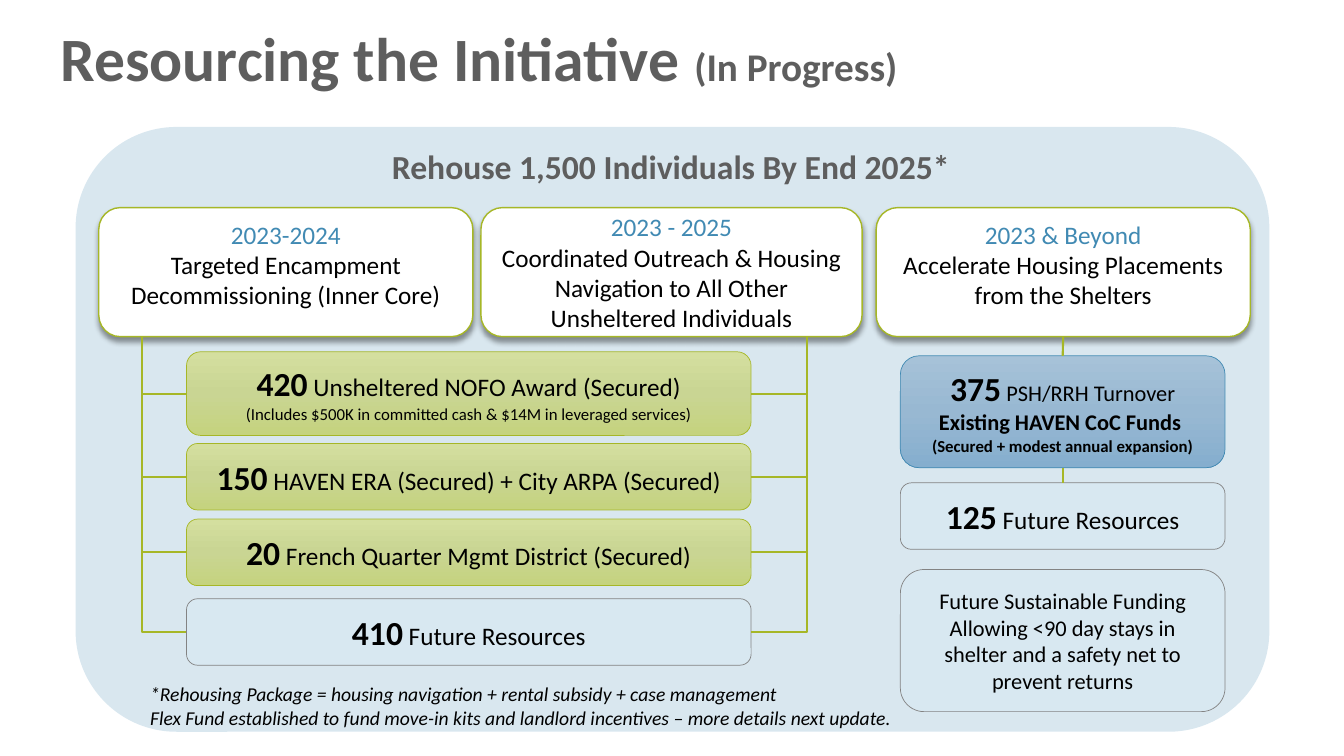
from copy import deepcopy

from lxml.etree import SubElement
from pptx import Presentation
from pptx.dml.color import RGBColor
from pptx.enum.shapes import MSO_CONNECTOR as LINE, MSO_SHAPE
from pptx.enum.text import MSO_ANCHOR as ANCHOR, PP_ALIGN as ALIGN
from pptx.oxml.ns import qn
from pptx.util import Inches, Pt

GREY = RGBColor(0x5E, 0x5E, 0x5E)
EDGE_GREY = RGBColor(0x83, 0x83, 0x83)
BLUE = RGBColor(0x41, 0x8A, 0xB3)
GREEN = RGBColor(0xA6, 0xB7, 0x27)
PALE = RGBColor(0xD8, 0xE8, 0xF1)
WHITE = RGBColor(0xFF, 0xFF, 0xFF)
BLACK = RGBColor(0, 0, 0)
GREEN_FADE = (RGBColor(0xD4, 0xDF, 0x9F), RGBColor(0xC9, 0xD5, 0x93), RGBColor(0xC5, 0xD3, 0x7E))
BLUE_FADE = (RGBColor(0xA6, 0xC2, 0xD8), RGBColor(0x98, 0xB8, 0xD2), RGBColor(0x85, 0xAE, 0xCE))


class SlideBuilder:
    font = "Calibri"

    def __init__(self, slide):
        self.slide = slide

    def fill_text(self, frame, paragraphs, align=ALIGN.CENTER, anchor=ANCHOR.MIDDLE):
        frame.word_wrap = True
        frame.vertical_anchor = anchor
        for index, runs in enumerate(paragraphs):
            paragraph = frame.paragraphs[0] if index == 0 else frame.add_paragraph()
            paragraph.alignment = align
            for text, size, color, bold, italic in runs:
                run = paragraph.add_run()
                run.text = text
                run.font.name = self.font
                run.font.size = Pt(size)
                run.font.color.rgb = color
                run.font.bold = bold
                run.font.italic = italic

    def title(self, left, top, width, height, runs):
        title = self.slide.shapes.title
        title.left, title.top = Inches(left), Inches(top)
        title.width, title.height = Inches(width), Inches(height)
        self.fill_text(title.text_frame, [runs], ALIGN.LEFT)
        title.text_frame.paragraphs[0].line_spacing = 0.9

    def text(self, left, top, width, height, paragraphs, align):
        box = self.slide.shapes.add_textbox(Inches(left), Inches(top), Inches(width), Inches(height))
        self.fill_text(box.text_frame, paragraphs, align, ANCHOR.TOP)

    def card(self, left, top, width, height, fill, edge=None, weight=0.5,
             paragraphs=(), anchor=ANCHOR.MIDDLE):
        card = self.slide.shapes.add_shape(
            MSO_SHAPE.ROUNDED_RECTANGLE, Inches(left), Inches(top), Inches(width), Inches(height))
        card.shadow.inherit = False
        if isinstance(fill, RGBColor):
            card.fill.solid()
            card.fill.fore_color.rgb = fill
        else:
            self.fade(card, fill)
        if edge is None:
            card.line.fill.background()
        else:
            card.line.color.rgb = edge
            card.line.width = Pt(weight)
        self.fill_text(card.text_frame, paragraphs, anchor=anchor)
        return card

    def fade(self, card, colors):
        card.fill.gradient()
        card.fill.gradient_angle = 270
        first = card._element.spPr.find(".//" + qn("a:gs"))
        middle = deepcopy(first)
        middle.set("pos", "50000")
        first.addnext(middle)
        for stop, color in zip(card.fill.gradient_stops, colors):
            stop.color.rgb = color

    def set_alpha(self, card, percent):
        color = card._element.spPr.find(qn("a:solidFill")).find(qn("a:srgbClr"))
        SubElement(color, qn("a:alpha"), val=str(percent * 1000))

    def drop_shadow(self, card):
        effects = card._element.spPr.find(qn("a:effectLst"))
        shadow = SubElement(effects, qn("a:outerShdw"), blurRad=str(Pt(4)), dist=str(Pt(3)),
                            dir="5400000", algn="t", rotWithShape="0")
        color = SubElement(shadow, qn("a:srgbClr"), val="000000")
        SubElement(color, qn("a:alpha"), val="40000")

    def connector(self, kind, x1, y1, x2, y2):
        link = self.slide.shapes.add_connector(kind, Inches(x1), Inches(y1), Inches(x2), Inches(y2))
        link.line.color.rgb = GREEN
        link.line.width = Pt(1.5)
        SubElement(link._element.spPr, qn("a:effectLst"))
        return link

    def branch(self, card, side, trunk_x, trunk_y):
        edge = card.left + (card.width if side == 3 else 0)
        middle = card.top + card.height // 2
        link = self.connector(LINE.ELBOW, edge / Inches(1), middle / Inches(1), trunk_x, trunk_y)
        link._element.spPr.find(qn("a:prstGeom")).set("prst", "bentConnector2")
        link.begin_connect(card, side)

    def drop(self, upper, lower, x, y1, y2):
        link = self.connector(LINE.STRAIGHT, x, y1, x, y2)
        link.begin_connect(upper, 2)
        link.end_connect(lower, 0)


def run(text, size, color=BLACK, bold=False, italic=False):
    return text, size, color, bold, italic


def amount(number, label, size=18):
    return [run(number, 24, bold=True), run(" " + label, size)]


def main():
    deck = Presentation()
    deck.slide_width, deck.slide_height = Inches(13.33), Inches(7.5)
    page = SlideBuilder(deck.slides.add_slide(deck.slide_layouts[5]))

    page.title(0.5, 0.17, 12.74, 0.89, [
        run("Resourcing the Initiative ", 44, GREY, True), run("(In Progress)", 28, GREY, True)])
    panel = page.card(0.75, 1.26, 11.84, 6, BLUE)
    page.set_alpha(panel, 20)

    phases = []
    for left, width, years, goal, anchor in (
            (0.98, 3.71, "2023-2024", "Targeted Encampment Decommissioning (Inner Core)", ANCHOR.TOP),
            (4.77, 3.78, "2023 - 2025",
             "Coordinated Outreach & Housing Navigation to All Other Unsheltered Individuals",
             ANCHOR.MIDDLE),
            (8.69, 3.71, "2023 & Beyond", "Accelerate Housing Placements from the Shelters", ANCHOR.TOP)):
        phase = page.card(left, 2.06, width, 1.28, WHITE, GREEN, 1,
                          [[run(years, 18, BLUE)], [run(goal, 18)]], anchor)
        page.drop_shadow(phase)
        phases.append(phase)
    page.text(3.3, 1.4, 6.71, 0.5,
              [[run("Rehouse 1,500 Individuals By End 2025*", 24, GREY, True)]], ALIGN.CENTER)

    nofo_note = [run("(Includes $500K in committed cash & $14M in leveraged services)", 12)]
    for top, height, fill, edge, paragraphs in (
            (3.49, 0.83, GREEN_FADE, GREEN,
             [amount("420", "Unsheltered NOFO Award (Secured)"), nofo_note]),
            (4.4, 0.66, GREEN_FADE, GREEN,
             [amount("150", "HAVEN ERA (Secured) + City ARPA (Secured)")]),
            (5.15, 0.66, GREEN_FADE, GREEN,
             [amount("20", "French Quarter Mgmt District (Secured)")]),
            (5.94, 0.66, PALE, EDGE_GREY, [amount("410", "Future Resources")])):
        source = page.card(1.85, top, 5.6, height, fill, edge, paragraphs=paragraphs)
        page.branch(source, 1, 1.41, 3.34)
        page.branch(source, 3, 8, 3.34)

    turnover = page.card(8.93, 3.53, 3.22, 1.11, BLUE_FADE, BLUE, paragraphs=[
        amount("375", "PSH/RRH Turnover", 16),
        [run("Existing HAVEN CoC Funds ", 16, bold=True)],
        [run("(Secured + modest annual expansion)", 12, bold=True)]])
    future = page.card(8.93, 4.79, 3.22, 0.66, PALE, EDGE_GREY,
                       paragraphs=[amount("125", "Future Resources")])
    page.card(8.93, 5.65, 3.22, 1.41, PALE, EDGE_GREY, paragraphs=[[run(
        "Future Sustainable Funding Allowing <90 day stays in shelter and a safety net to prevent returns",
        16)]])
    page.drop(phases[2], turnover, 10.54, 3.34, 3.53)
    page.drop(turnover, future, 10.54, 4.64, 4.79)

    page.text(1.39, 6.72, 11.84, 0.57, [
        [run("*Rehousing Package = housing navigation + rental subsidy + case management", 14, italic=True)],
        [run("Flex Fund established to fund move-in kits and landlord incentives – more details next update.",
             14, italic=True)]], ALIGN.LEFT)
    deck.save("out.pptx")


if __name__ == "__main__":
    main()
